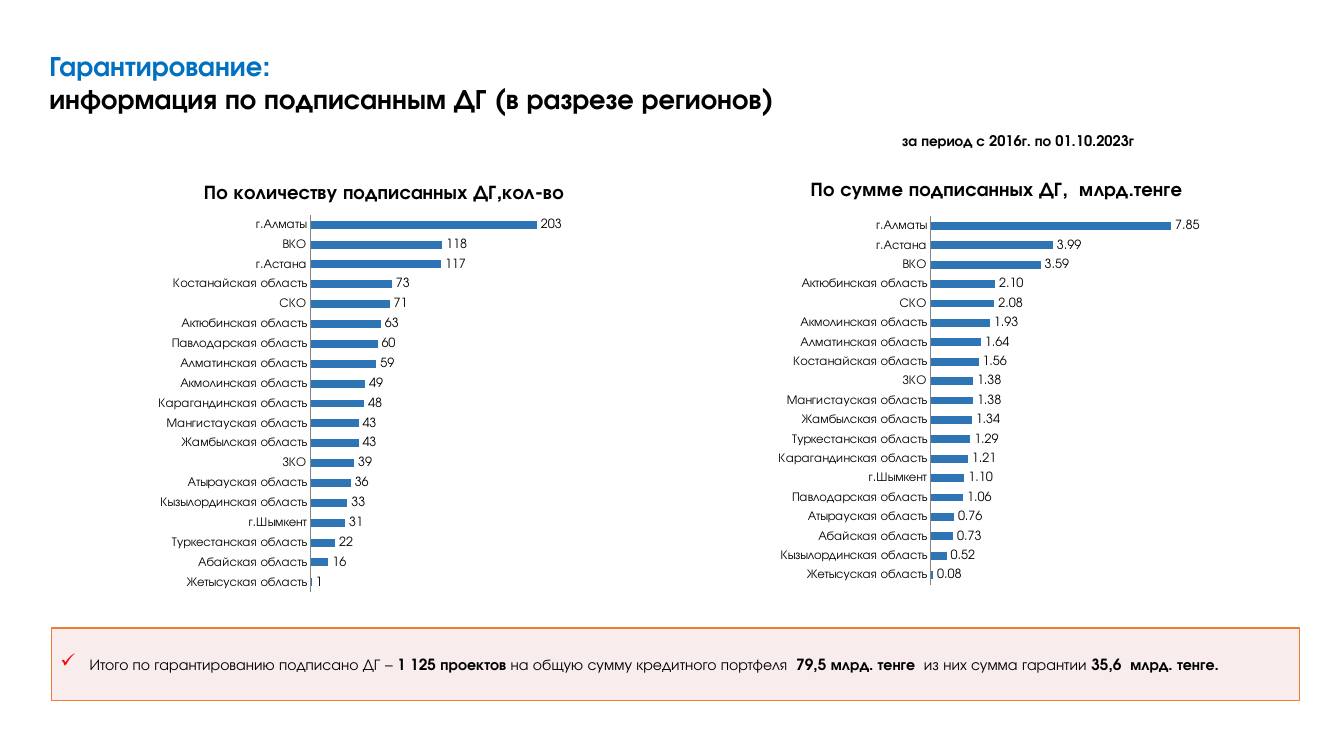
from dataclasses import dataclass

from lxml import etree
from pptx import Presentation
from pptx.chart.data import CategoryChartData
from pptx.dml.color import RGBColor
from pptx.enum.chart import XL_CHART_TYPE, XL_LABEL_POSITION, XL_TICK_MARK
from pptx.enum.shapes import MSO_SHAPE
from pptx.enum.text import MSO_ANCHOR, MSO_AUTO_SIZE, PP_ALIGN
from pptx.oxml import parse_xml
from pptx.oxml.ns import nsdecls, qn
from pptx.util import Inches, Pt

BAR = XL_CHART_TYPE.BAR_CLUSTERED
OUTSIDE_END = XL_LABEL_POSITION.OUTSIDE_END
NO_TICK = XL_TICK_MARK.NONE
RECT = MSO_SHAPE.RECTANGLE
MIDDLE = MSO_ANCHOR.MIDDLE
GROW = MSO_AUTO_SIZE.SHAPE_TO_FIT_TEXT
LEFT = PP_ALIGN.LEFT

COUNTS = [
    ("Жетысуская область", 1), ("Абайская область", 16),
    ("Туркестанская область", 22), ("г.Шымкент", 31),
    ("Кызылординская область", 33), ("Атырауская область", 36),
    ("ЗКО", 39), ("Жамбылская область", 43),
    ("Мангистауская область", 43), ("Карагандинская область", 48),
    ("Акмолинская область", 49), ("Алматинская область", 59),
    ("Павлодарская область", 60), ("Актюбинская область", 63),
    ("СКО", 71), ("Костанайская область", 73),
    ("г.Астана", 117), ("ВКО", 118), ("г.Алматы", 203),
]
SUMS = [
    ("Жетысуская область", 0.08), ("Кызылординская область", 0.52),
    ("Абайская область", 0.73), ("Атырауская область", 0.76),
    ("Павлодарская область", 1.06), ("г.Шымкент", 1.10),
    ("Карагандинская область", 1.21), ("Туркестанская область", 1.29),
    ("Жамбылская область", 1.34), ("Мангистауская область", 1.38),
    ("ЗКО", 1.38), ("Костанайская область", 1.56),
    ("Алматинская область", 1.64), ("Акмолинская область", 1.93),
    ("СКО", 2.08), ("Актюбинская область", 2.10),
    ("ВКО", 3.59), ("г.Астана", 3.99), ("г.Алматы", 7.85),
]


@dataclass(frozen=True)
class Theme:
    font: str = "TeX Gyre Adventor"
    chart_font: str = "Calibri"
    text: str = "000000"
    accent: str = "0070C0"
    bar: str = "2E75B6"
    axis: str = "868686"
    panel: str = "F2DCDB"
    border: str = "ED7D31"
    check: str = "FF0000"
    title: float = 20
    chart_title: float = 14
    body: float = 11
    note: float = 10.5
    chart: float = 10
    label: float = 9


def rgb(color):
    return RGBColor.from_string(color)


def set_font(font, name, size, color, bold=False):
    font.name = name
    font.size = Pt(size)
    font.bold = bold
    font.color.rgb = rgb(color)


def add_text(p, text, *, font, size, color, bold=False):
    r = p.add_run()
    r.text = text
    set_font(r.font, font, size, color, bold)


def set_layout(parent, before, x, y, w=None, h=None):
    for old in parent.findall(qn("c:layout")):
        parent.remove(old)
    layout = etree.Element(qn("c:layout"))
    manual = etree.SubElement(layout, qn("c:manualLayout"))
    settings = [("xMode", "edge"), ("yMode", "edge"), ("x", x), ("y", y)]
    if w:
        settings = [("layoutTarget", "inner"), *settings, ("w", w), ("h", h)]
    for tag, val in settings:
        etree.SubElement(manual, qn(f"c:{tag}")).set("val", str(val))
    parent.find(qn(before)).addprevious(layout)


class SlideBuilder:
    def __init__(self, slide, theme):
        self.slide = slide
        self.theme = theme

    def text_box(self, box, lines, size, wrap=True):
        sp = self.slide.shapes.add_textbox(*map(Inches, box))
        tf = sp.text_frame
        tf.word_wrap = wrap
        tf.auto_size = GROW
        p = tf.paragraphs[0]
        for i, (text, color) in enumerate(lines):
            if i:
                p.add_line_break()
            add_text(p, text, font=self.theme.font, size=size, color=color, bold=True)

    def summary(self, box, runs):
        t = self.theme
        sp = self.slide.shapes.add_shape(RECT, *map(Inches, box))
        sp.shadow.inherit = False
        sp.fill.solid()
        sp.fill.fore_color.rgb = rgb(t.panel)
        color = sp.fill._xPr.find(".//" + qn("a:srgbClr"))
        etree.SubElement(color, qn("a:alpha")).set("val", "50000")
        sp.line.color.rgb = rgb(t.border)
        sp.line.width = Pt(1)
        tf = sp.text_frame
        tf.word_wrap = True
        tf.vertical_anchor = MIDDLE
        tf.margin_left = tf.margin_right = Inches(0.08)
        tf.margin_top = tf.margin_bottom = Inches(0.04)
        p = tf.paragraphs[0]
        p.alignment = LEFT
        p.space_after = Pt(6)
        pPr = p._p.get_or_add_pPr()
        pPr.set("marL", str(Inches(0.3)))
        pPr.set("indent", str(Inches(-0.29)))
        ns = nsdecls("a")
        for bullet in (
            f'<a:buClr {ns}><a:srgbClr val="{t.check}"/></a:buClr>',
            f'<a:buSzPct {ns} val="125000"/>',
            f'<a:buChar {ns} char="✓"/>',
        ):
            pPr.append(parse_xml(bullet))
        for text, bold in runs:
            add_text(p, text, font=t.font, size=t.body, color=t.text, bold=bold)

    def bar_chart(self, box, title, title_at, plot, rows, top, size, fmt):
        t = self.theme
        data = CategoryChartData()
        data.categories = [region for region, _ in rows]
        data.add_series("Series 1", [value for _, value in rows])
        chart = self.slide.shapes.add_chart(BAR, *map(Inches, box), data).chart
        set_font(chart.font, t.chart_font, size, t.text)
        chart.has_legend = False
        chart.has_title = True
        add_text(chart.chart_title.text_frame.paragraphs[0], title, font=t.font,
                 size=t.chart_title, color=t.text, bold=True)
        chart.chart_title.include_in_layout = False
        set_layout(chart.chart_title._element, "c:overlay", *title_at)
        set_layout(chart._chartSpace.chart.plotArea, "c:barChart", *plot)

        regions = chart.category_axis
        regions.major_tick_mark = regions.minor_tick_mark = NO_TICK
        regions.format.line.color.rgb = rgb(t.axis)
        set_font(regions.tick_labels.font, t.font, t.label, t.text)
        values = chart.value_axis
        values.minimum_scale = 0
        values.maximum_scale = top
        values.has_major_gridlines = False
        values.visible = False

        bars = chart.plots[0]
        bars.gap_width = 150
        bars.vary_by_categories = False
        fill = bars.series[0].format.fill
        fill.solid()
        fill.fore_color.rgb = rgb(t.bar)
        labels = bars.series[0].data_labels
        labels.show_value = True
        labels.position = OUTSIDE_END
        labels.number_format = fmt
        labels.number_format_is_linked = False
        set_font(labels.font, t.font, t.label, t.text)


def main():
    prs = Presentation()
    prs.slide_width = Inches(13.33)
    prs.slide_height = Inches(7.5)
    t = Theme()
    s = SlideBuilder(prs.slides.add_slide(prs.slide_layouts[6]), t)
    s.text_box((0.39, 0.43, 8.58, 0.77), [
        ("Гарантирование:", t.accent),
        ("информация по подписанным ДГ (в разрезе регионов)", t.text),
    ], t.title)
    s.text_box((8.85, 1.26, 2.64, 0.28),
               [("за период с 2016г. по 01.10.2023г", t.text)], t.note, wrap=False)
    s.summary((0.51, 6.23, 12.38, 0.72), [
        ("Итого по гарантированию подписано ДГ – ", False),
        ("1 125 проектов ", True),
        ("на общую сумму кредитного портфеля  ", False),
        ("79,5 млрд. тенге  ", True),
        ("из них сумма гарантии", False),
        (" 35,6  млрд. тенге.", True),
    ])
    s.bar_chart((0.95, 1.64, 5.76, 4.46), "По количеству подписанных ДГ,кол-во",
                (0.18, 0.03), (0.37, 0.11, 0.48, 0.84), COUNTS, 250, t.chart, "General")
    s.bar_chart((7, 1.7, 5.58, 4.46), "По сумме подписанных ДГ,  млрд.тенге",
                (0.18, 0.01), (0.4, 0.1, 0.49, 0.82), SUMS, 9, t.label, "#,##0.00")
    prs.save("out.pptx")


if __name__ == "__main__":
    main()
